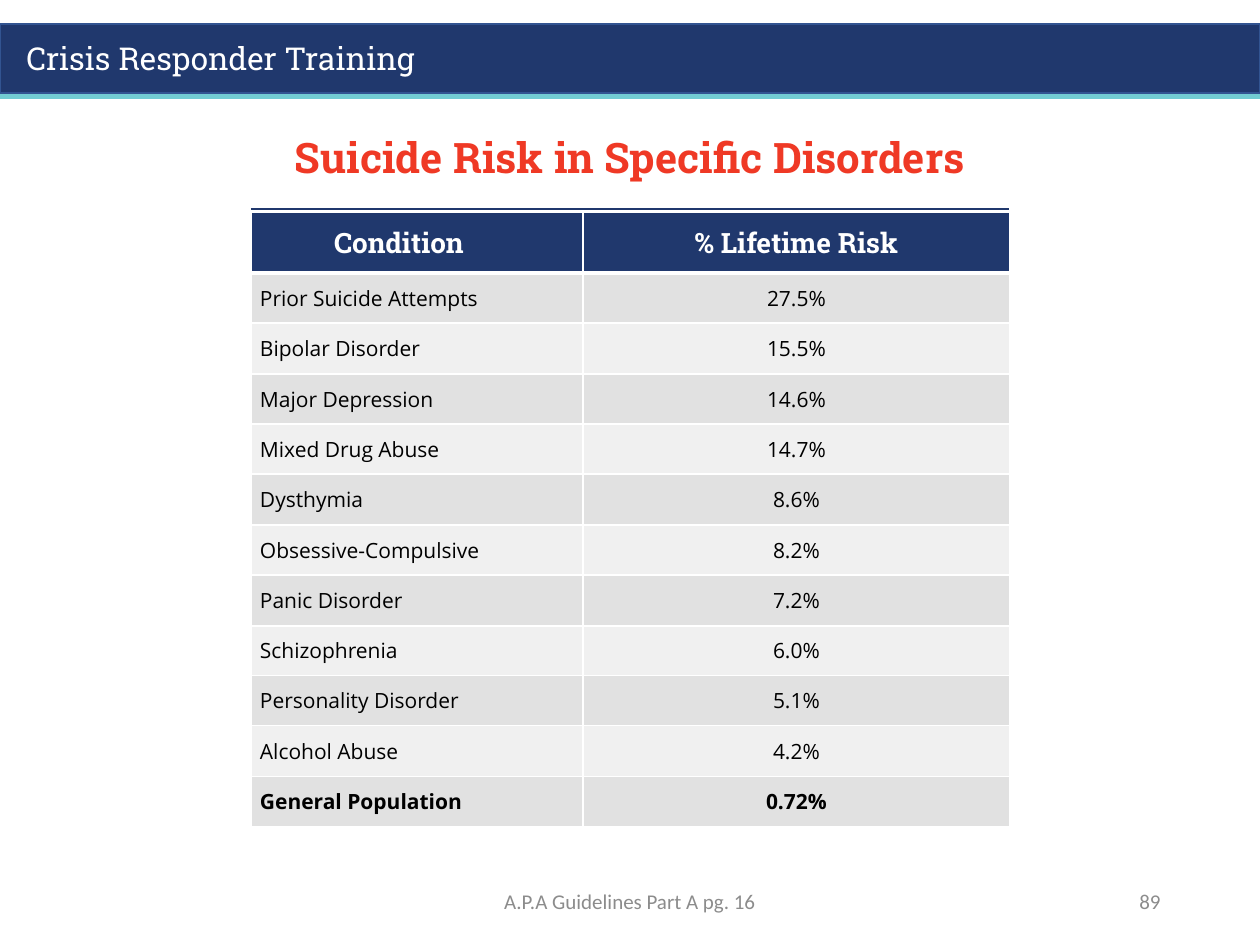
from lxml import etree
from pptx import Presentation, util as u
from pptx.dml.color import RGBColor
from pptx.enum import shapes, text
from pptx.oxml.ns import qn

SCALE = 914400 / 126
NAVY, TEAL, RED, WHITE, BLACK, GREY = "20386D", "72CCD2", "EF3925", "FFFFFF", "000000", "8C8C8C"
BANDS = ("E1E1E1", "F0F0F0")
SLAB, SANS, FOOT = "Roboto Slab", "Open Sans", "Calibri"
LEFT, CENTER, RIGHT = text.PP_ALIGN.LEFT, text.PP_ALIGN.CENTER, text.PP_ALIGN.RIGHT
TOP, MIDDLE = text.MSO_ANCHOR.TOP, text.MSO_ANCHOR.MIDDLE

RISKS = [
    ("Prior Suicide Attempts", "27.5%"),
    ("Bipolar Disorder", "15.5%"),
    ("Major Depression", "14.6%"),
    ("Mixed Drug Abuse", "14.7%"),
    ("Dysthymia", "8.6%"),
    ("Obsessive-Compulsive", "8.2%"),
    ("Panic Disorder", "7.2%"),
    ("Schizophrenia", "6.0%"),
    ("Personality Disorder", "5.1%"),
    ("Alcohol Abuse", "4.2%"),
    ("General Population", "0.72%"),
]


def px(length):
    return u.Emu(round(length * SCALE))


def color(value):
    return RGBColor.from_string(value)


class Deck:
    def __init__(self, width, height):
        self.prs = Presentation()
        self.prs.slide_width, self.prs.slide_height = px(width), px(height)
        self.slide = self.prs.slides.add_slide(self.prs.slide_layouts[6])

    def style(self, paragraph, words, font, size, ink, bold=False, align=LEFT):
        paragraph.text = words
        paragraph.alignment = align
        paragraph.font.name, paragraph.font.size = font, u.Pt(size)
        paragraph.font.bold = bold
        paragraph.font.color.rgb = color(ink)

    def bar(self, box, fill, outline=None):
        band = self.slide.shapes.add_shape(shapes.MSO_SHAPE.RECTANGLE, *map(px, box))
        band.shadow.inherit = False
        band.fill.solid()
        band.fill.fore_color.rgb = color(fill)
        if outline:
            band.line.color.rgb = color(outline)
            band.line.width = u.Pt(1)
        else:
            band.line.fill.background()

    def label(self, box, words, font, size, ink, bold=False, align=LEFT, anchor=MIDDLE, spacing=None):
        frame = self.slide.shapes.add_textbox(*map(px, box)).text_frame
        frame.word_wrap = True
        frame.vertical_anchor = anchor
        self.style(frame.paragraphs[0], words, font, size, ink, bold, align)
        frame.paragraphs[0].line_spacing = spacing

    def rule(self, x1, y1, x2, y2, ink, width):
        line = self.slide.shapes.add_connector(shapes.MSO_CONNECTOR.STRAIGHT, *map(px, (x1, y1, x2, y2)))
        line.line.color.rgb = color(ink)
        line.line.width = u.Pt(width)
        etree.SubElement(line._element.spPr, qn("a:effectLst"))

    def cell(self, cell, words, fill, top, bottom, margin_right=9, **look):
        cell.margin_left, cell.margin_right = px(9), px(margin_right)
        cell.margin_top = cell.margin_bottom = px(5)
        cell.vertical_anchor = MIDDLE
        self.style(cell.text_frame.paragraphs[0], words, **look)
        props = cell._tc.get_or_add_tcPr()
        for side, width in (("lnL", 1), ("lnR", 1), ("lnT", top), ("lnB", bottom)):
            border = etree.SubElement(props, qn(f"a:{side}"), w=str(u.Pt(width)))
            etree.SubElement(etree.SubElement(border, qn("a:solidFill")), qn("a:srgbClr"), val=WHITE)
        cell.fill.solid()
        cell.fill.fore_color.rgb = color(fill)

    def risk_table(self, left, top, widths, header_height, body_height, rows):
        box = (left, top, sum(widths), header_height + body_height)
        table = self.slide.shapes.add_table(len(rows) + 1, 2, *map(px, box)).table
        table.horz_banding = False
        for column, width in zip(table.columns, widths):
            column.width = px(width)
        table.rows[0].height = px(header_height)
        header = dict(font=SLAB, size=16, ink=WHITE, bold=True, align=CENTER)
        self.cell(table.cell(0, 0), "Condition", NAVY, 1, 3, margin_right=45, **header)
        self.cell(table.cell(0, 1), "% Lifetime Risk", NAVY, 1, 3, **header)
        edges = [round(body_height * i / len(rows)) for i in range(len(rows) + 1)]
        for i, row in enumerate(rows):
            table.rows[i + 1].height = px(edges[i + 1] - edges[i])
            for j, (words, align) in enumerate(zip(row, (LEFT, CENTER))):
                self.cell(table.cell(i + 1, j), words, BANDS[i % 2], 1 if i else 3, 1,
                          font=SANS, size=12, ink=BLACK, bold=i == len(rows) - 1, align=align)


def main():
    deck = Deck(1260, 945)
    deck.bar((0, 60, 1260, 39), TEAL)
    deck.bar((0, 24, 1260, 69), NAVY, "325491")
    deck.label((14, 33, 466, 50), "Crisis Responder Training", SLAB, 18, WHITE, anchor=TOP)
    deck.label((417, 876, 426, 50), "A.P.A Guidelines Part A pg. 16", FOOT, 12, GREY, align=CENTER)
    deck.label((87, 126, 1086, 67), "Suicide Risk in Specific Disorders", SLAB, 24, RED,
               bold=True, align=CENTER, spacing=0.9)
    deck.label((890, 876, 283, 50), "89", FOOT, 12, GREY, align=RIGHT)
    deck.risk_table(251, 212, (332, 427), 61, 554, RISKS)
    deck.rule(251, 209, 1009, 209, NAVY, 1.5)
    deck.prs.save("out.pptx")


if __name__ == "__main__":
    main()
